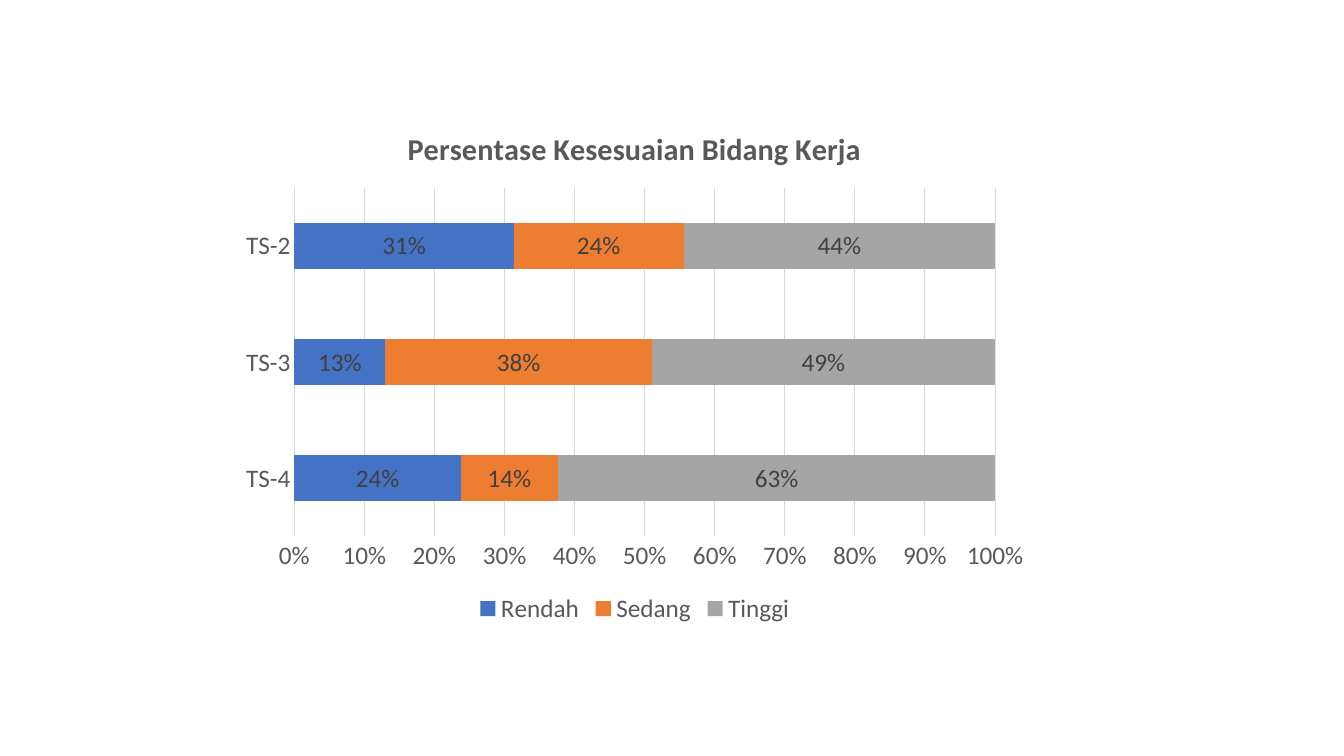
from pptx import Presentation
from pptx.chart.data import CategoryChartData
from pptx.dml.color import RGBColor
from pptx.enum.chart import (XL_CHART_TYPE, XL_LABEL_POSITION,
                             XL_LEGEND_POSITION, XL_TICK_MARK)
from pptx.util import Inches, Pt

TITLE = "Persentase Kesesuaian Bidang Kerja"
YEARS = ["TS-4", "TS-3", "TS-2"]
LEVELS = [
    ("Rendah", (0.24, 0.13, 0.31), RGBColor(0x44, 0x72, 0xC4)),
    ("Sedang", (0.14, 0.38, 0.24), RGBColor(0xED, 0x7D, 0x31)),
    ("Tinggi", (0.63, 0.49, 0.44), RGBColor(0xA5, 0xA5, 0xA5)),
]
BOX = (2.28, 1.05, 8.03, 5.19)
FACE = "Calibri"
GRAY = RGBColor(0x59, 0x59, 0x59)
DARK = RGBColor(0x40, 0x40, 0x40)
PALE = RGBColor(0xD9, 0xD9, 0xD9)
STACK = XL_CHART_TYPE.BAR_STACKED_100
CENTER = XL_LABEL_POSITION.CENTER
BOTTOM = XL_LEGEND_POSITION.BOTTOM
NONE = XL_TICK_MARK.NONE


def style(font, color=GRAY, size=18, bold=False):
    font.name, font.size, font.bold = FACE, Pt(size), bold
    font.color.rgb = color


def rule(line):
    line.color.rgb = PALE
    line.width = Pt(0.75)


def add_bars(slide):
    data = CategoryChartData(number_format="0%")
    data.categories = YEARS
    for name, shares, _ in LEVELS:
        data.add_series(name, shares)
    chart = slide.shapes.add_chart(STACK, *map(Inches, BOX), data).chart
    style(chart.font)

    chart.has_title = True
    head = chart.chart_title.text_frame
    head.text = TITLE
    style(head.paragraphs[0].font, size=21.6, bold=True)
    chart.chart_title.include_in_layout = False

    chart.has_legend = True
    chart.legend.position = BOTTOM
    chart.legend.include_in_layout = False
    style(chart.legend.font)

    years, scale = chart.category_axis, chart.value_axis
    for axis in (years, scale):
        axis.major_tick_mark = axis.minor_tick_mark = NONE
        style(axis.tick_labels.font)
    rule(years.format.line)
    scale.format.line.fill.background()
    scale.has_major_gridlines = True
    rule(scale.major_gridlines.format.line)
    scale.minimum_scale, scale.maximum_scale, scale.major_unit = 0, 1, 0.1
    scale.tick_labels.number_format = "0%"
    scale.tick_labels.number_format_is_linked = False

    plot = chart.plots[0]
    plot.gap_width, plot.overlap = 150, 100
    plot.vary_by_categories = False
    for bars, (_, _, color) in zip(plot.series, LEVELS):
        bars.format.fill.solid()
        bars.format.fill.fore_color.rgb = color
        labels = bars.data_labels
        labels.show_value = True
        labels.position = CENTER
        labels.number_format = "0%"
        labels.number_format_is_linked = False
        style(labels.font, DARK)


def main():
    deck = Presentation()
    deck.slide_width, deck.slide_height = Inches(13.33), Inches(7.5)
    add_bars(deck.slides.add_slide(deck.slide_layouts[6]))
    deck.save("out.pptx")


if __name__ == "__main__":
    main()
